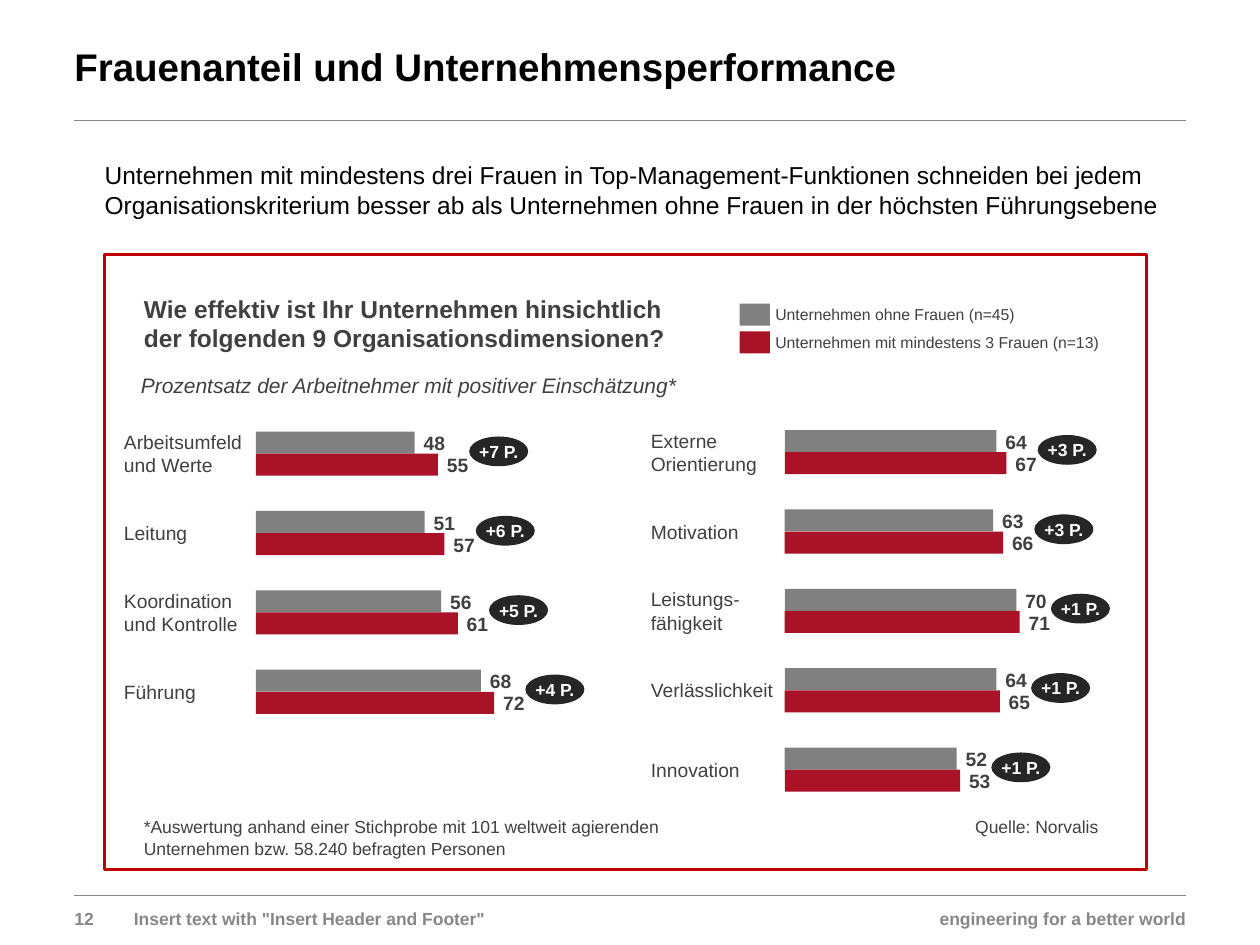
from lxml import etree
from pptx import Presentation
from pptx.dml.color import RGBColor
from pptx.enum.shapes import MSO_CONNECTOR, MSO_SHAPE
from pptx.enum.text import MSO_ANCHOR, PP_ALIGN
from pptx.oxml.ns import qn
from pptx.util import Cm, Pt

RECT, OVAL = MSO_SHAPE.RECTANGLE, MSO_SHAPE.OVAL
TOP, MIDDLE = MSO_ANCHOR.TOP, MSO_ANCHOR.MIDDLE
LEFT, CENTER, RIGHT = PP_ALIGN.LEFT, PP_ALIGN.CENTER, PP_ALIGN.RIGHT
STRAIGHT = MSO_CONNECTOR.STRAIGHT

COLORS = {
    "black": "000000", "text": "404040", "footer": "878787", "frame": "C00000",
    "without": "808080", "with": "AA1228", "badge": "262626", "white": "FFFFFF",
}

# Content
TITLE = "Frauenanteil und Unternehmensperformance"
STATEMENT = ("Unternehmen mit mindestens drei Frauen in Top-Management-Funktionen "
             "schneiden bei jedem Organisationskriterium besser ab als Unternehmen "
             "ohne Frauen in der höchsten Führungsebene")
QUESTION = ("Wie effektiv ist Ihr Unternehmen hinsichtlich "
            "der folgenden 9 Organisationsdimensionen?")
MEASURE = "Prozentsatz der Arbeitnehmer mit positiver Einschätzung*"
FOOTNOTE = ("*Auswertung anhand einer Stichprobe mit 101 weltweit agierenden "
            "Unternehmen bzw. 58.240 befragten Personen")
SOURCE = "Quelle: Norvalis"
LEGEND = [("without", "Unternehmen ohne Frauen (n=45)"),
          ("with", "Unternehmen mit mindestens 3 Frauen (n=13)")]
# Column: label left, bar left, first row top, rows of (label, without, with)
COLUMNS = [
    (2.5, 5.16, 8.7, [
        ("Arbeitsumfeld und Werte", 48, 55),
        ("Leitung", 51, 57),
        ("Koordination und Kontrolle", 56, 61),
        ("Führung", 68, 72),
    ]),
    (13.12, 15.82, 8.67, [
        ("Externe Orientierung", 64, 67),
        ("Motivation", 63, 66),
        ("Leistungs-fähigkeit", 70, 71),
        ("Verlässlichkeit", 64, 65),
        ("Innovation", 52, 53),
    ]),
]
# Footer: left, width, alignment, text
FOOTER = [(1.5, 1, LEFT, "12"),
          (2.7, 12, LEFT, 'Insert text with "Insert Header and Footer"'),
          (14.8, 9.1, RIGHT, "engineering for a better world")]

# Layout in cm
ROW_STEP = 1.6
BAR_HEIGHT = 0.445
CM_PER_POINT = 0.0667
VALUE_GAP = 0.18
BADGE_GAP = 0.63
BADGE_SIZE = (1.19, 0.6)
RULE_ENDS = (1.5, 23.9)

prs = Presentation()
prs.slide_width, prs.slide_height = Cm(25.4), Cm(19.05)
slide = prs.slides.add_slide(prs.slide_layouts[5])


def color(name):
    return RGBColor.from_string(COLORS[name])


def write(shape, text, size, ink="text", bold=False, italic=False,
          align=LEFT, anchor=TOP, wrap=True):
    frame = shape.text_frame
    frame.text = text
    frame.word_wrap = wrap
    frame.vertical_anchor = anchor
    frame.margin_left = frame.margin_right = 0
    frame.margin_top = frame.margin_bottom = 0
    paragraph = frame.paragraphs[0]
    paragraph.alignment = align
    font = paragraph.runs[0].font
    font.name, font.size = "Arial", Pt(size)
    font.bold, font.italic = bold, italic
    font.color.rgb = color(ink)


def add_text(left, top, width, height, text, size, **style):
    box = slide.shapes.add_textbox(Cm(left), Cm(top), Cm(width), Cm(height))
    write(box, text, size, **style)


def add_filled(kind, left, top, width, height, fill):
    shape = slide.shapes.add_shape(kind, Cm(left), Cm(top), Cm(width), Cm(height))
    shape.shadow.inherit = False
    shape.fill.solid()
    shape.fill.fore_color.rgb = color(fill)
    shape.line.fill.background()
    return shape


# Title, statement and rules
title = slide.shapes.title
title.left, title.top, title.width, title.height = Cm(1.5), Cm(0.89), Cm(17.04), Cm(0.99)
write(title, TITLE, 22, ink="black", bold=True, anchor=MIDDLE, wrap=False)
title.text_frame.paragraphs[0].line_spacing = 0.9
add_text(2.11, 3.23, 21.79, 1.3, STATEMENT, 14, ink="black")

for y in (2.42, 18.06):
    rule = slide.shapes.add_connector(STRAIGHT, Cm(RULE_ENDS[0]), Cm(y),
                                      Cm(RULE_ENDS[1]), Cm(y))
    rule.line.color.rgb = color("footer")
    rule.line.width = Pt(0.5)
    etree.SubElement(rule._element.spPr, qn("a:effectLst"))

# Frame with headings and notes
panel = slide.shapes.add_shape(RECT, Cm(2.11), Cm(5.13), Cm(21), Cm(12.4))
panel.shadow.inherit = False
panel.fill.background()
panel.line.color.rgb = color("frame")
panel.line.width = Pt(1.5)

add_text(2.9, 5.92, 10.6, 1.2, QUESTION, 14, bold=True)
add_text(2.84, 7.52, 14.4, 0.51, MEASURE, 12, italic=True)
add_text(2.9, 16.46, 11.4, 0.86, FOOTNOTE, 10)
add_text(19.66, 16.46, 3.02, 0.43, SOURCE, 10)

# Legend
for i, (series, caption) in enumerate(LEGEND):
    top = 6.12 + 0.56 * i
    add_filled(RECT, 14.91, top, 0.61, BAR_HEIGHT, series)
    add_text(15.63, top, 7.06, BAR_HEIGHT, caption, 9, anchor=MIDDLE)

# Paired bars with values and difference badges
for label_left, bar_left, first_top, rows in COLUMNS:
    for i, (label, without, with_women) in enumerate(rows):
        row_top = first_top + ROW_STEP * i
        add_text(label_left, row_top, 2.7, 2 * BAR_HEIGHT, label, 11, anchor=MIDDLE)
        for j, (series, value) in enumerate((("without", without), ("with", with_women))):
            bar_top = row_top + BAR_HEIGHT * j
            length = value * CM_PER_POINT
            add_filled(RECT, bar_left, bar_top, length, BAR_HEIGHT, series)
            add_text(bar_left + length + VALUE_GAP, bar_top, 0.74, 0.48,
                     str(value), 11, bold=True)
        badge_left = bar_left + with_women * CM_PER_POINT + BADGE_GAP
        badge = add_filled(OVAL, badge_left, row_top + 0.1, *BADGE_SIZE, "badge")
        write(badge, f"+{with_women - without} P.", 10, ink="white", bold=True,
              align=CENTER, anchor=MIDDLE, wrap=False)

# Footer
for left, width, align, text in FOOTER:
    add_text(left, 18.29, width, 0.46, text, 10, ink="footer", bold=True,
             align=align, anchor=MIDDLE)

prs.save("out.pptx")
